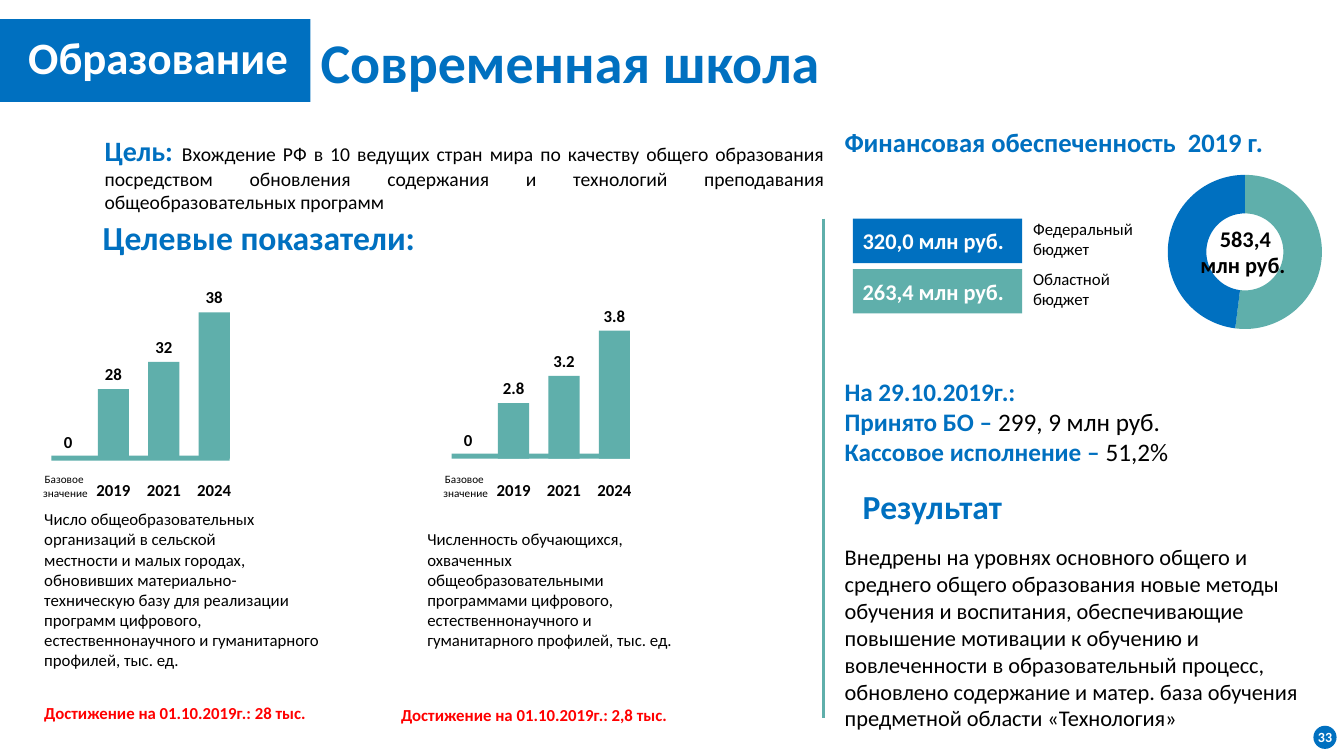
from dataclasses import dataclass
from typing import NamedTuple

from lxml import etree
from pptx import Presentation
from pptx.chart.data import CategoryChartData
from pptx.dml.color import RGBColor
from pptx.enum.chart import XL_CHART_TYPE
from pptx.enum.shapes import MSO_CONNECTOR, MSO_SHAPE
from pptx.enum.text import MSO_ANCHOR, MSO_AUTO_SIZE, PP_ALIGN
from pptx.oxml.ns import qn
from pptx.util import Inches, Pt

RECT, OVAL = MSO_SHAPE.RECTANGLE, MSO_SHAPE.OVAL
LEFT, MID, FULL = PP_ALIGN.LEFT, PP_ALIGN.CENTER, PP_ALIGN.JUSTIFY
TOP, CENTER = MSO_ANCHOR.TOP, MSO_ANCHOR.MIDDLE
DONUT, STRAIGHT = XL_CHART_TYPE.DOUGHNUT, MSO_CONNECTOR.STRAIGHT

FONT = "Calibri"
HUES = {"blue": "0070C0", "teal": "5FAFAB", "black": "000000",
        "white": "FFFFFF", "red": "FF0000"}
CELL = 0.1  # side of a grid cell in inches: 133.33 columns by 75 rows
COLS, ROWS = 133.33, 75


class Box(NamedTuple):
    col: float
    row: float
    wide: float
    high: float


class Run(NamedTuple):
    text: str
    size: float
    hue: str = "black"
    bold: bool = False


class Note(NamedTuple):
    box: Box
    paras: list[list[Run]]
    align: PP_ALIGN = LEFT


class Bar(NamedTuple):
    year: str
    value: str
    high: float


@dataclass
class Graph:
    col: float
    base: float
    bars: list[Bar]


def cell(count: float) -> int:
    return Inches(count * CELL)


def place(shape, box: Box) -> None:
    shape.left, shape.top, shape.width, shape.height = map(cell, box)


def paint(color, hue: str) -> None:
    color.rgb = RGBColor.from_string(HUES[hue])


def write(frame, paras: list[list[Run]], align=LEFT, anchor=TOP) -> None:
    frame.word_wrap = True
    frame.auto_size = MSO_AUTO_SIZE.NONE
    frame.vertical_anchor = anchor
    for num, runs in enumerate(paras):
        para = frame.add_paragraph() if num else frame.paragraphs[0]
        para.alignment = align
        para.space_before = Pt(0)
        for item in runs:
            for row, text in enumerate(item.text.split("\n")):
                if row:
                    para.add_line_break()
                run = para.add_run()
                run.text = text
                run.font.name, run.font.size = FONT, Pt(item.size)
                run.font.bold = item.bold
                paint(run.font.color, item.hue)


def add_note(slide, note: Note) -> None:
    shape = slide.shapes.add_textbox(*map(cell, note.box))
    write(shape.text_frame, note.paras, note.align)


def add_block(slide, box: Box, hue: str, kind=RECT):
    shape = slide.shapes.add_shape(kind, *map(cell, box))
    shape.shadow.inherit = False
    shape.fill.solid()
    paint(shape.fill.fore_color, hue)
    shape.line.fill.background()
    return shape


def add_graph(slide, graph: Graph) -> None:
    """Draw the bars on their base line, with values above and years below."""
    step, wide, floor, label = 5, 3.1, 45.5, 6.5
    add_block(slide, Box(graph.col - 4.6, graph.base, 17.7, 0.5), "teal")
    add_note(slide, Note(Box(graph.col - 7.2, 46.4, 8, 4),
                         [[Run("Базовое \nзначение", 8)]], MID))
    add_note(slide, Note(Box(graph.col - 6.2, graph.base - 2.9, label, 3),
                         [[Run("0", 12, bold=True)]], MID))
    for num, bar in enumerate(graph.bars):
        col = graph.col + num * step
        top = floor - bar.high
        add_block(slide, Box(col, top, wide, bar.high), "teal")
        edge = col + (wide - label) / 2
        for text, row in ((bar.value, top - 3), (bar.year, 47.1)):
            add_note(slide, Note(Box(edge, row, label, 3),
                                 [[Run(text, 12, bold=True)]], MID))


def add_ring(slide, box: Box) -> None:
    data = CategoryChartData()
    data.categories = ["1", "2"]
    data.add_series("Series 1", (52, 48))
    chart = slide.shapes.add_chart(DONUT, *map(cell, box), data).chart
    chart.has_legend = chart.has_title = False
    chart.font.name, chart.font.size = FONT, Pt(10)
    paint(chart.font.color, "black")
    plot = chart.plots[0]
    plot.vary_by_categories = False
    for num, hue in enumerate(("teal", "blue")):
        fill = plot.series[0].points[num].format.fill
        fill.solid()
        paint(fill.fore_color, hue)
    chart.element.find(".//" + qn("c:holeSize")).set("val", "75")
    area = chart.element.find(".//" + qn("c:plotArea"))
    for old in area.findall(qn("c:layout")):
        area.remove(old)
    layout = etree.Element(qn("c:layout"))
    area.insert(0, layout)
    manual = etree.SubElement(layout, qn("c:manualLayout"))
    for tag, val in (("layoutTarget", "inner"), ("xMode", "edge"),
                     ("yMode", "edge"), ("x", "0.075"), ("y", "0.075"),
                     ("w", "0.85"), ("h", "0.85")):
        etree.SubElement(manual, qn("c:" + tag)).set("val", val)


def add_rule(slide, col: float, top: float, end: float) -> None:
    line = slide.shapes.add_connector(STRAIGHT, *map(cell, (col, top, col, end)))
    paint(line.line.color, "teal")
    line.line.width = Pt(1.5)
    etree.SubElement(line.element.spPr, qn("a:effectLst"))


NOTES = [
    Note(Box(9.4, 12.7, 73.4, 9.1), [[
        Run("Цель: ", 20, "blue", True),
        Run("Вхождение РФ в 10 ведущих стран мира по качеству общего образования "
            "посредством обновления содержания и технологий преподавания "
            "общеобразовательных программ", 14)]], FULL),
    Note(Box(9.2, 21, 34.1, 5), [[Run("Целевые показатели:", 24, "blue", True)]]),
    Note(Box(84.6, 47.7, 34.1, 5), [[Run("Результат", 24, "blue", True)]]),
    Note(Box(82.8, 12, 49.3, 4.2),
         [[Run("Финансовая обеспеченность  2019 г.", 19, "blue", True)]]),
    Note(Box(115, 21.8, 17.1, 6.4), [[Run("583,4\nмлн руб. ", 16, bold=True)]], MID),
    Note(Box(3.4, 50, 30.9, 17.2), [
        [Run("Число общеобразовательных организаций в сельской", 12)],
        [Run("местности и малых городах, обновивших материально-", 12)],
        [Run("техническую базу для реализации программ цифрового, "
             "естественнонаучного и гуманитарного профилей, тыс. ед.", 12)]]),
    Note(Box(41.4, 52, 26.5, 13.1), [[
        Run("Численность обучающихся, охваченных общеобразовательными программами "
            "цифрового, естественнонаучного и гуманитарного профилей, тыс. ед.", 12)]]),
    Note(Box(3.4, 69.2, 37.9, 3),
         [[Run("Достижение на 01.10.2019г.: 28 тыс.", 12, "red", True)]]),
    Note(Box(38.8, 69.4, 37.9, 3),
         [[Run("Достижение на 01.10.2019г.: 2,8 тыс.", 12, "red", True)]]),
    Note(Box(82.8, 36.8, 47.6, 11.8), [
        [Run("На 29.10.2019г.:", 18, "blue", True)],
        [Run("Принято БО – ", 18, "blue", True), Run("299, 9 млн руб.", 18)],
        [Run("Кассовое исполнение – ", 18, "blue", True), Run("51,2%", 18)]]),
]
GRAPHS = [
    Graph(9.7, 45.2, [Bar("2019", "28", 6.9), Bar("2021", "32", 9.6),
                      Bar("2024", "38", 14.5)]),
    Graph(49.4, 45, [Bar("2019", "2.8", 5.5), Bar("2021", "3.2", 8.2),
                     Bar("2024", "3.8", 12.7)]),
]
FUNDS = [("320,0 млн руб.", "Федеральный бюджет", "blue"),
         ("263,4 млн руб.", "Областной бюджет", "teal")]
RESULT = ("Внедрены на уровнях основного общего и среднего общего образования новые "
          "методы обучения и воспитания, обеспечивающие повышение мотивации к обучению "
          "и вовлеченности в образовательный процесс, обновлено содержание и матер. "
          "база обучения предметной области «Технология»")


def main() -> None:
    deck = Presentation()
    deck.slide_width, deck.slide_height = cell(COLS), cell(ROWS)
    slide = deck.slides.add_slide(deck.slide_layouts[1])
    title, body = slide.placeholders
    place(title, Box(30.8, 2.2, 100, 7.7))
    write(title.text_frame, [[Run("Современная школа", 40, "blue", True)]])
    place(body, Box(82.8, 53.4, 49.8, 19.9))
    write(body.text_frame, [[Run(RESULT, 16)]])
    props = body.text_frame.paragraphs[0]._p.get_or_add_pPr()
    props.set("marL", "0")
    props.set("indent", "0")
    etree.SubElement(props, qn("a:buNone"))

    add_rule(slide, 81.7, 21.7, 71.2)
    add_ring(slide, Box(114.5, 16, 18, 18))
    for num, (total, label, hue) in enumerate(FUNDS):
        row = 21.7 + 5 * num
        block = add_block(slide, Box(84.6, row, 16.8, 4.4), hue)
        write(block.text_frame, [[Run(total, 16, "white", True)]], anchor=CENTER)
        add_note(slide, Note(Box(101.5, row - 0.5, 15.1, 5), [[Run(label, 12)]]))
    for note in NOTES:
        add_note(slide, note)
    for graph in GRAPHS:
        add_graph(slide, graph)

    tag = add_block(slide, Box(0, 1.9, 30.8, 8.2), "blue").text_frame
    write(tag, [[Run("Образование", 32, "white", True)]], anchor=CENTER)
    tag.margin_left, tag.margin_right, tag.margin_bottom = cell(2.8), 0, cell(1.3)
    page = add_block(slide, Box(130.3, 72, 2.3, 2.3), "blue", OVAL).text_frame
    write(page, [[Run("33", 10, "white", True)]], MID, CENTER)
    page.margin_left = page.margin_right = page.margin_top = page.margin_bottom = 0
    page.word_wrap = False
    deck.save("out.pptx")


if __name__ == "__main__":
    main()
